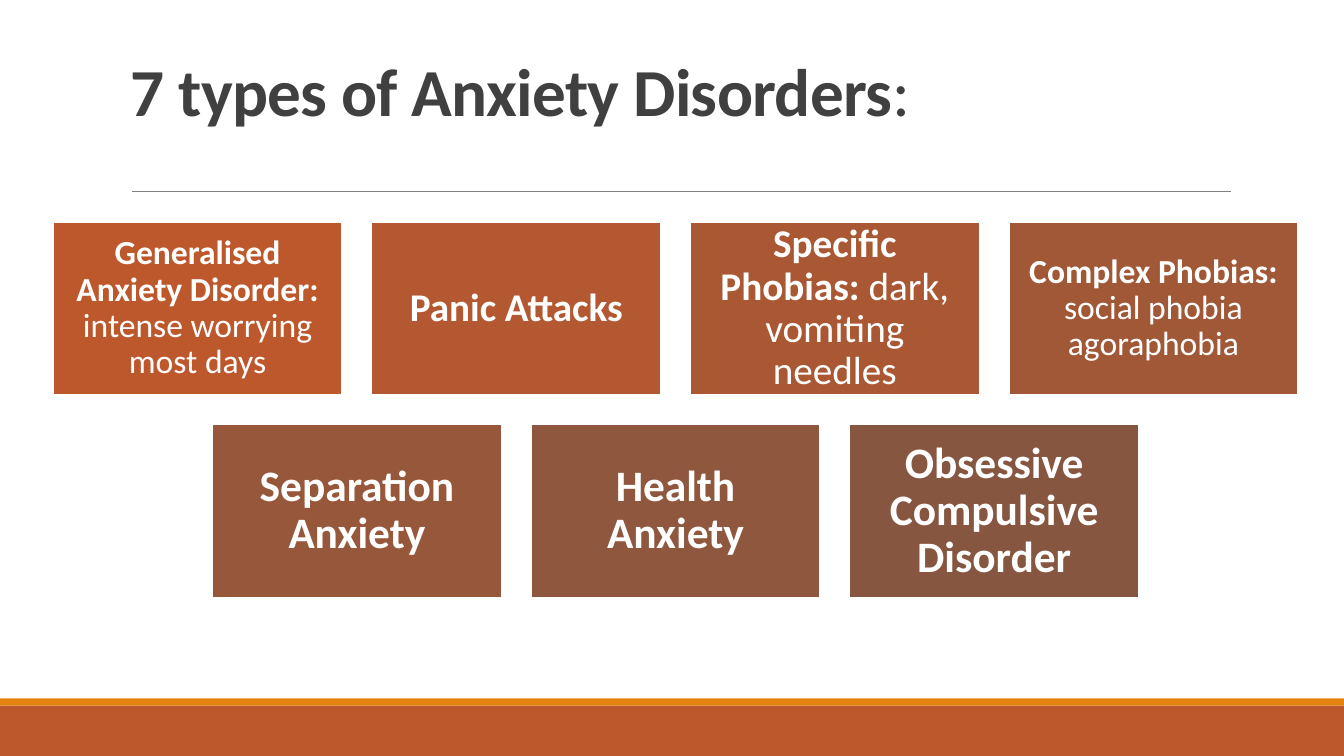
"""Build the slide on seven types of anxiety disorders."""
from lxml.etree import SubElement
from pptx import Presentation
from pptx.dml.color import RGBColor
from pptx.enum.shapes import MSO_CONNECTOR, MSO_SHAPE
from pptx.enum.text import MSO_ANCHOR, PP_ALIGN
from pptx.oxml.ns import qn
from pptx.util import Inches, Pt

WIDE, HIGH = 13.33, 7.5
FONT = "Calibri"
TITLE = ("7 types of Anxiety Disorders", ":")
ROWS = [
    [
        ("Generalised Anxiety Disorder: ", "intense worrying most days", 24, "BD582C"),
        ("Panic Attacks", "", 28, "B35830"),
        ("Specific Phobias: ", "dark, vomiting needles", 28, "AA5834"),
        ("Complex Phobias: ", "social phobia agoraphobia", 24, "A05837"),
    ],
    [
        ("Separation Anxiety", "", 31, "97573A"),
        ("Health Anxiety", "", 31, "8F573D"),
        ("Obsessive Compulsive Disorder", "", 31, "865640"),
    ],
]
BANDS = [(7, 0.5, "BD582C"), (6.93, 0.07, "E48312")]
CARD_W, CARD_H, GAP = 2.87, 1.72, 0.29
MID, TOP = 6.7, 2.2


def tint(code):
    """Turn a hex string into a colour."""
    return RGBColor.from_string(code)


def block(slide, x, y, w, h, fill, edge=None):
    """Draw a flat rectangle with an optional outline."""
    shape = slide.shapes.add_shape(
        MSO_SHAPE.RECTANGLE, Inches(x), Inches(y), Inches(w), Inches(h))
    shape.shadow.inherit = False
    shape.fill.solid()
    shape.fill.fore_color.rgb = tint(fill)
    if edge:
        shape.line.color.rgb = tint(edge)
        shape.line.width = Pt(1.25)
    else:
        shape.line.fill.background()
    return shape


def write(shape, bold, plain, *, size, color, align, anchor, lead, pad, track=0):
    """Write a bold part and a plain part as one paragraph."""
    frame = shape.text_frame
    frame.word_wrap = True
    frame.vertical_anchor = anchor
    frame.margin_left = frame.margin_right = Inches(pad[0])
    frame.margin_top = frame.margin_bottom = Inches(pad[1])
    para = frame.paragraphs[0]
    para.alignment, para.line_spacing = align, lead
    for text, heavy in ((bold, True), (plain, False)):
        if text:
            run = para.add_run()
            run.text = text
            font = run.font
            font.name, font.size, font.bold = FONT, Pt(size), heavy
            font.color.rgb = tint(color)
            if track:
                run._r.get_or_add_rPr().set("spc", str(round(track * 100)))


def rule(slide, x, y, end):
    """Draw the thin line under the title."""
    line = slide.shapes.add_connector(
        MSO_CONNECTOR.STRAIGHT, Inches(x), Inches(y), Inches(end), Inches(y))
    line.line.color.rgb = tint("808080")
    line.line.width = Pt(0.5)
    SubElement(line._element.spPr, qn("a:effectLst"))


def main():
    """Lay out the slide and save it."""
    deck = Presentation()
    deck.slide_width, deck.slide_height = Inches(WIDE), Inches(HIGH)
    slide = deck.slides.add_slide(deck.slide_layouts[6])
    for y, h, fill in BANDS:
        block(slide, 0, y, WIDE, h, fill)
    rule(slide, 1.31, 1.9, 12.21)
    head = slide.shapes.add_textbox(Inches(1.2), Inches(0.31), Inches(11), Inches(1.03))
    write(head, *TITLE, size=48, color="404040", align=PP_ALIGN.LEFT,
          anchor=MSO_ANCHOR.BOTTOM, lead=0.85, pad=(0.1, 0.05), track=-0.5)
    for r, row in enumerate(ROWS):
        left = MID - (len(row) * (CARD_W + GAP) - GAP) / 2
        for c, (bold, plain, size, fill) in enumerate(row):
            card = block(slide, left + c * (CARD_W + GAP), TOP + r * (CARD_H + GAP),
                         CARD_W, CARD_H, fill, "FFFFFF")
            write(card, bold, plain, size=size, color="FFFFFF", align=PP_ALIGN.CENTER,
                  anchor=MSO_ANCHOR.MIDDLE, lead=0.9, pad=(size / 240, size / 240))
    deck.save("out.pptx")


if __name__ == "__main__":
    main()
